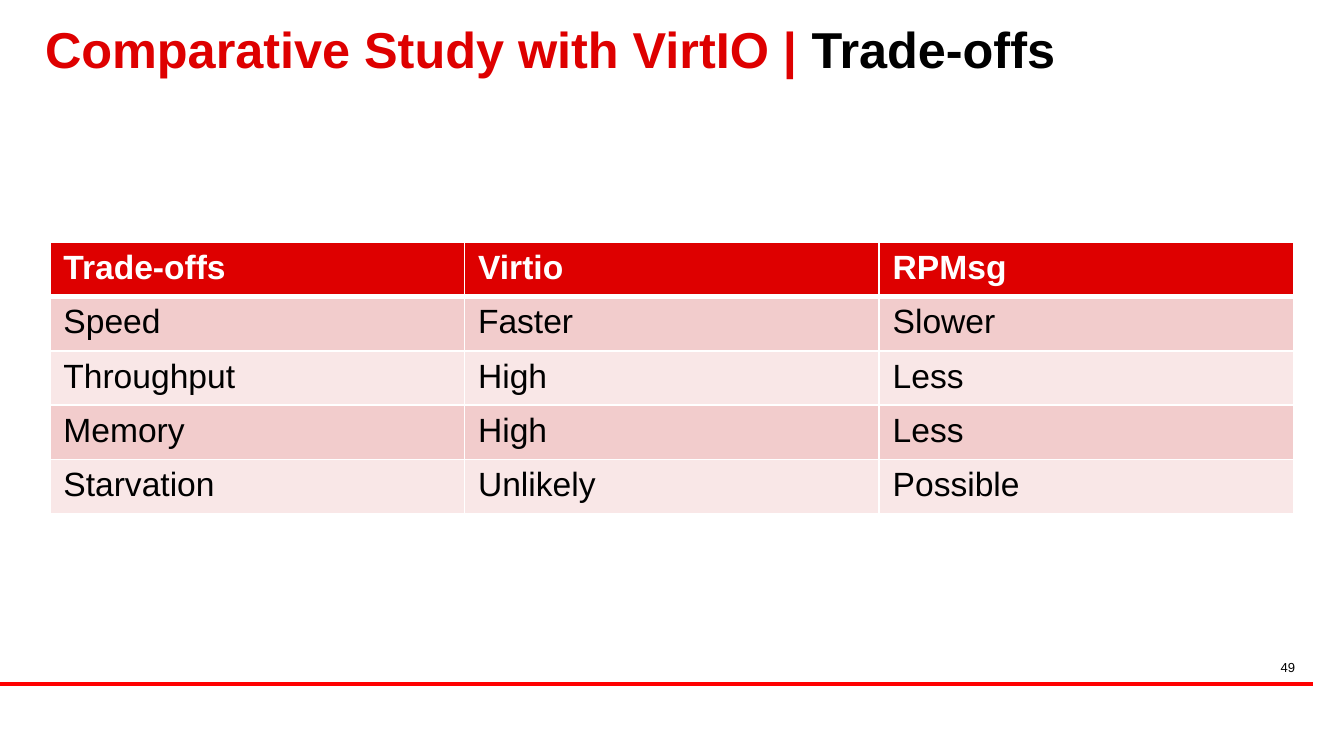
import pptx
import pptx.dml.color
import pptx.enum.shapes
import pptx.enum.text
import pptx.oxml
import pptx.oxml.ns
import pptx.util
from lxml import etree

SLIDE_SIZE = (1344, 756)
EMU_PER_PX = 914400 / 134.4
FONT = "Arial"
RED, BLACK, WHITE = "DE0000", "000000", "FFFFFF"
RULE_RED = "FF0000"
BAND_FILLS = ("F2CCCC", "F9E7E7")

TITLE_BOX = (34, 8, 1243, 90)
TITLE_PARTS = [("Comparative Study with VirtIO | ", RED), ("Trade-offs", BLACK)]
TABLE_BOX = (50, 242, 1244, 272)
TRADE_OFFS = [
    ("Trade-offs", "Virtio", "RPMsg"),
    ("Speed", "Faster", "Slower"),
    ("Throughput", "High", "Less"),
    ("Memory", "High", "Less"),
    ("Starvation", "Unlikely", "Possible"),
]
NUMBER_BOX = (993, 653, 313, 23)
PAGE_NUMBER = "49"
FOOTER_LINE = (0, 684, 1313, 684)


def px(length):
    return pptx.util.Emu(round(length * EMU_PER_PX))


def rgb(color):
    return pptx.dml.color.RGBColor.from_string(color)


def add_run(paragraph, text, size, color, bold=False):
    run = paragraph.add_run()
    run.text = text
    formats = {"name": FONT, "size": pptx.util.Pt(size), "bold": bold}
    for name, value in formats.items():
        setattr(run.font, name, value)
    run.font.color.rgb = rgb(color)


def format_frame(frame, anchor):
    formats = {
        "word_wrap": True,
        "auto_size": pptx.enum.text.MSO_AUTO_SIZE.NONE,
        "vertical_anchor": anchor,
        "margin_left": px(11), "margin_right": px(11),
        "margin_top": px(6), "margin_bottom": px(6),
    }
    for name, value in formats.items():
        setattr(frame, name, value)


def set_border(cell, side, points):
    """Draw one white cell border; call before the cell's fill is set."""
    properties = cell._tc.get_or_add_tcPr()
    line = etree.SubElement(properties, pptx.oxml.ns.qn(f"a:ln{side}"),
                            w=str(pptx.util.Pt(points)))
    fill = etree.SubElement(line, pptx.oxml.ns.qn("a:solidFill"))
    etree.SubElement(fill, pptx.oxml.ns.qn("a:srgbClr"), val=WHITE)


def add_footer_line(slide):
    line = slide.shapes.add_connector(
        pptx.enum.shapes.MSO_CONNECTOR.STRAIGHT, *map(px, FOOTER_LINE))
    line.line.color.rgb = rgb(RULE_RED)
    line.line.width = pptx.util.Pt(2.25)
    etree.SubElement(line._element.spPr, pptx.oxml.ns.qn("a:effectLst"))


def add_title(slide):
    title = slide.shapes.title
    for name, length in zip(("left", "top", "width", "height"), TITLE_BOX):
        setattr(title, name, px(length))
    format_frame(title.text_frame, pptx.enum.text.MSO_ANCHOR.MIDDLE)
    paragraph = title.text_frame.paragraphs[0]
    paragraph.alignment = pptx.enum.text.PP_ALIGN.LEFT
    paragraph.line_spacing = 0.85
    for text, color in TITLE_PARTS:
        add_run(paragraph, text, 27, color, bold=True)


def add_trade_off_table(slide):
    table = slide.shapes.add_table(
        len(TRADE_OFFS), len(TRADE_OFFS[0]), *map(px, TABLE_BOX)).table
    for row, texts in enumerate(TRADE_OFFS):
        header = row == 0
        fill = RED if header else BAND_FILLS[(row - 1) % 2]
        widths = {"L": 1, "R": 1, "T": 3 if row == 1 else 1, "B": 3 if header else 1}
        for column, text in enumerate(texts):
            cell = table.cell(row, column)
            for side, points in widths.items():
                set_border(cell, side, points)
            cell.fill.solid()
            cell.fill.fore_color.rgb = rgb(fill)
            add_run(cell.text_frame.paragraphs[0], text, 18,
                    WHITE if header else BLACK, bold=header)


def add_page_number(slide):
    frame = slide.shapes.add_textbox(*map(px, NUMBER_BOX)).text_frame
    format_frame(frame, pptx.enum.text.MSO_ANCHOR.TOP)
    paragraph = frame.paragraphs[0]
    paragraph.alignment = pptx.enum.text.PP_ALIGN.RIGHT
    add_run(paragraph, PAGE_NUMBER, 7, BLACK)


def main():
    presentation = pptx.Presentation()
    presentation.slide_width, presentation.slide_height = map(px, SLIDE_SIZE)
    slide = presentation.slides.add_slide(presentation.slide_layouts[5])
    add_footer_line(slide)
    add_title(slide)
    add_trade_off_table(slide)
    add_page_number(slide)
    presentation.save("out.pptx")


if __name__ == "__main__":
    main()
